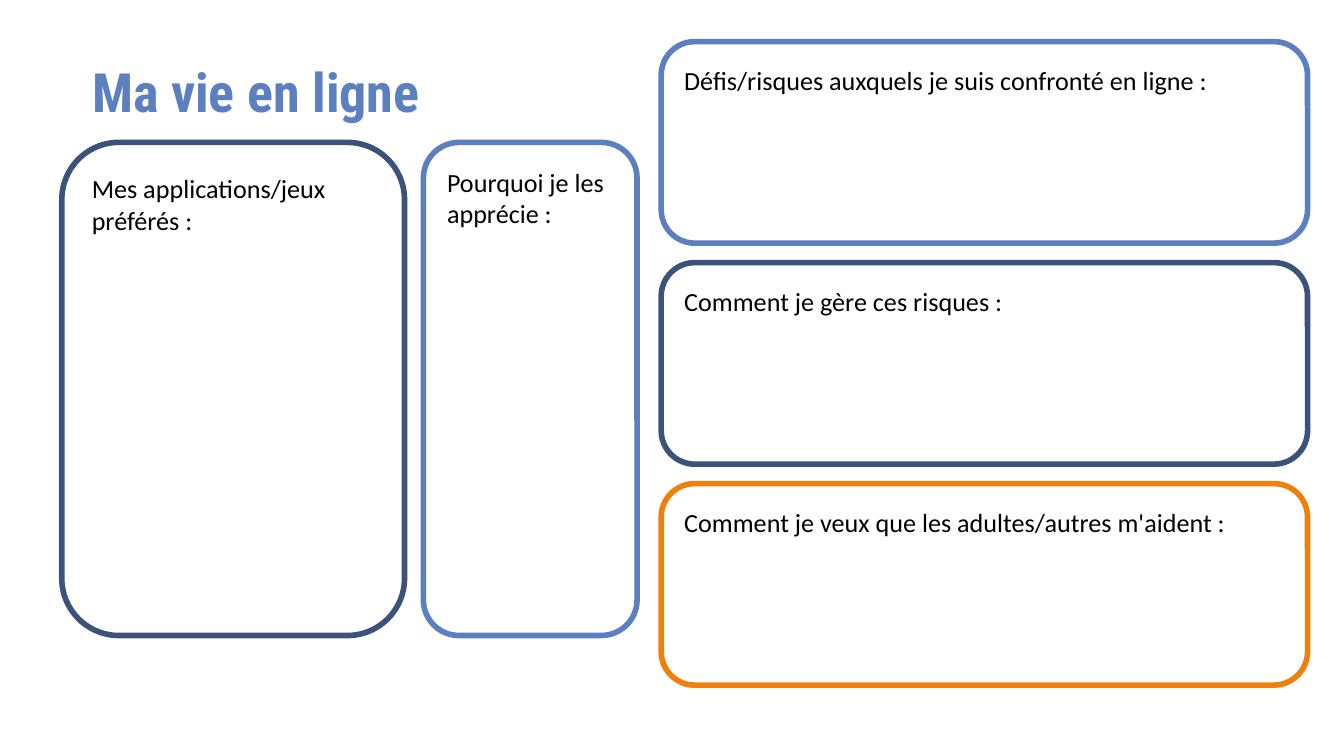
from pptx import Presentation
from pptx import util as u
from pptx.dml.color import RGBColor
from pptx.enum import shapes, text

THEME = {
    "navy": RGBColor(0x3B, 0x52, 0x7B),
    "blue": RGBColor(0x5B, 0x7F, 0xBF),
    "orange": RGBColor(0xF0, 0x80, 0x0E),
    "ink": RGBColor(0, 0, 0),
    "heading_font": "Roboto Condensed",
    "body_font": "Calibri",
    "heading_size": u.Pt(29),
    "body_size": u.Pt(14),
    "outline": u.Pt(3),
    "inset": u.Pt(7.2),
}

HEADING = "Ma vie en ligne"
COLUMNS = [
    {"left": 33.1, "top": 76.3, "width": 183.6, "height": 264.2, "gap": 0,
     "prompts": [("Mes applications/jeux préférés :", "navy")]},
    {"left": 226.8, "top": 76.3, "width": 114.5, "height": 264.2, "gap": 0,
     "prompts": [("Pourquoi je les apprécie :", "blue")]},
    {"left": 354.2, "top": 22.3, "width": 346.3, "height": 108, "gap": 10.4,
     "prompts": [("Défis/risques auxquels je suis confronté en ligne :", "blue"),
                 ("Comment je gère ces risques :", "navy"),
                 ("Comment je veux que les adultes/autres m'aident :", "orange")]},
]


def set_insets(frame, across, down):
    frame.margin_left = frame.margin_right = across
    frame.margin_top = frame.margin_bottom = down


def style(paragraph, face, size, color, bold=False):
    paragraph.alignment = text.PP_ALIGN.LEFT
    paragraph.font.name = face
    paragraph.font.size = size
    paragraph.font.bold = bold
    paragraph.font.color.rgb = color


def add_heading(slide):
    heading = slide.shapes.title
    heading.left, heading.top = u.Pt(43.9), u.Pt(26.6)
    heading.width, heading.height = u.Pt(631.4), u.Pt(48.2)
    frame = heading.text_frame
    frame.text = HEADING
    frame.word_wrap = True
    frame.auto_size = text.MSO_AUTO_SIZE.NONE
    frame.vertical_anchor = text.MSO_ANCHOR.MIDDLE
    set_insets(frame, u.Pt(5.4), u.Pt(2.7))
    paragraph = frame.paragraphs[0]
    paragraph.line_spacing = 0.9
    style(paragraph, THEME["heading_font"], THEME["heading_size"], THEME["blue"], True)


def add_panel(slide, prompt, color, left, top, width, height):
    panel = slide.shapes.add_shape(
        shapes.MSO_SHAPE.ROUNDED_RECTANGLE,
        u.Pt(left), u.Pt(top), u.Pt(width), u.Pt(height))
    panel.shadow.inherit = False
    panel.fill.background()
    panel.line.color.rgb = THEME[color]
    panel.line.width = THEME["outline"]
    frame = panel.text_frame
    frame.text = prompt
    frame.word_wrap = True
    frame.vertical_anchor = text.MSO_ANCHOR.TOP
    set_insets(frame, THEME["inset"], THEME["inset"])
    style(frame.paragraphs[0], THEME["body_font"], THEME["body_size"], THEME["ink"])


def main():
    deck = Presentation()
    deck.slide_width, deck.slide_height = u.Pt(720), u.Pt(405)
    slide = deck.slides.add_slide(deck.slide_layouts.get_by_name("Title Only"))
    add_heading(slide)
    for column in COLUMNS:
        pitch = column["height"] + column["gap"]
        for row, (prompt, color) in enumerate(column["prompts"]):
            add_panel(slide, prompt, color, column["left"], column["top"] + row * pitch,
                      column["width"], column["height"])
    deck.save("out.pptx")


if __name__ == "__main__":
    main()
